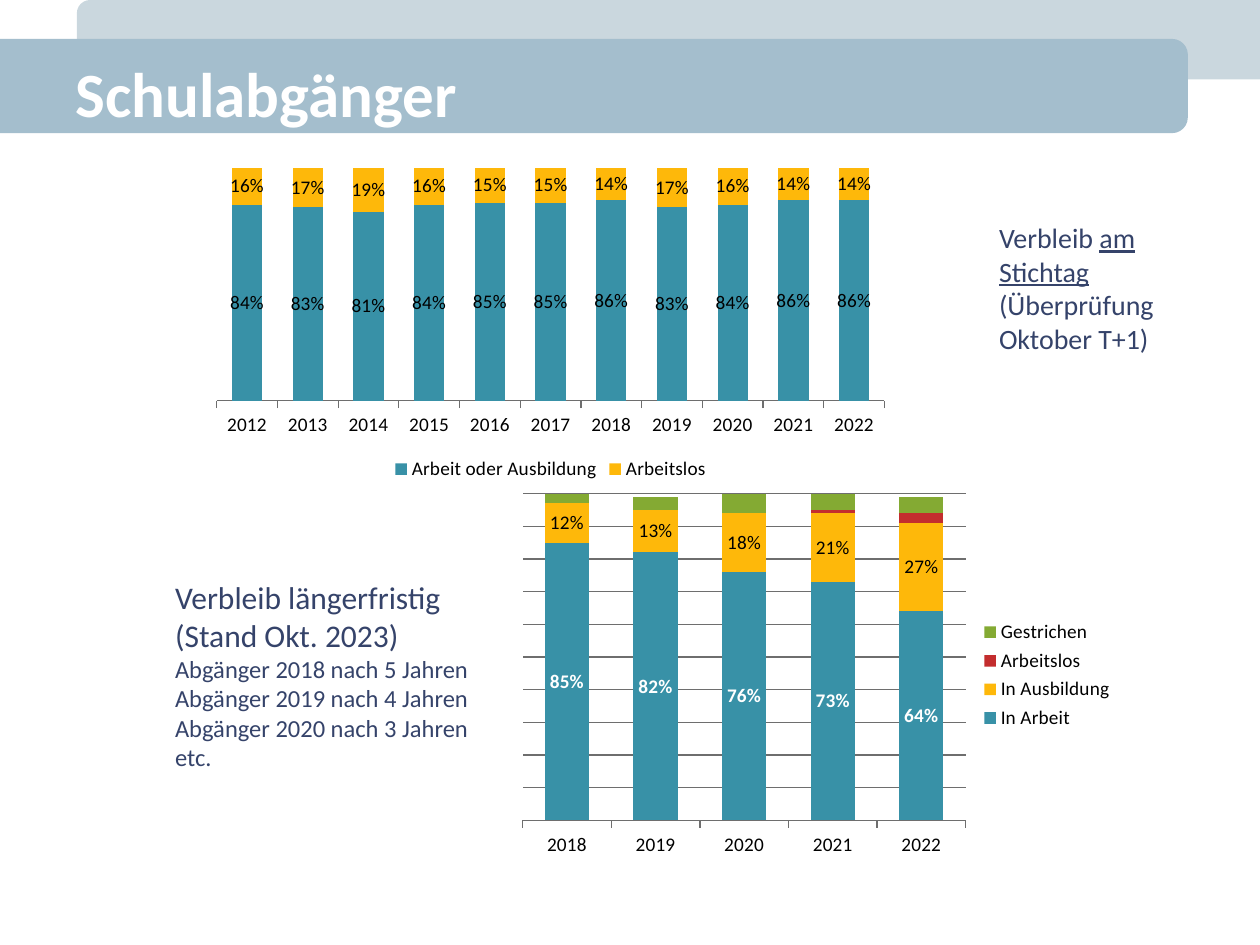
from typing import NamedTuple

from lxml import etree
from pptx import Presentation
from pptx.chart.data import CategoryChartData
from pptx.dml.color import RGBColor
from pptx.enum.chart import (XL_CHART_TYPE, XL_LABEL_POSITION, XL_LEGEND_POSITION,
                             XL_TICK_LABEL_POSITION, XL_TICK_MARK)
from pptx.enum.shapes import MSO_SHAPE
from pptx.enum.text import MSO_ANCHOR, PP_ALIGN
from pptx.oxml.ns import qn
from pptx.util import Cm, Pt

STACKED = XL_CHART_TYPE.COLUMN_STACKED
LABEL_CENTER = XL_LABEL_POSITION.CENTER
LEGEND_BOTTOM, LEGEND_RIGHT = XL_LEGEND_POSITION.BOTTOM, XL_LEGEND_POSITION.RIGHT
LABELS_LOW = XL_TICK_LABEL_POSITION.LOW
TICK_OUT, TICK_NONE = XL_TICK_MARK.OUTSIDE, XL_TICK_MARK.NONE
ROUND_TOP = MSO_SHAPE.ROUND_2_SAME_RECTANGLE
MIDDLE, LEFT = MSO_ANCHOR.MIDDLE, PP_ALIGN.LEFT

FONT = "Calibri"
COLORS = {
    "back_bar": "8BA8B8", "title_bar": "A4BECD", "white": "FFFFFF", "black": "000000",
    "text": "35436A", "axis": "6E6E6E",
    "teal": "3891A7", "yellow": "FEB80A", "red": "C32D2E", "green": "84AA33",
}


class Box(NamedTuple):
    """Left, top, width and height in centimetres."""
    left: float
    top: float
    width: float
    height: float

    def lengths(self):
        return [Cm(v) for v in self]


class Bar(NamedTuple):
    box: Box
    rotation: int
    color: str
    alpha: int = 100


class Series(NamedTuple):
    name: str
    color: str
    percents: list
    label_color: str | None = None
    bold: bool = False


class StackedChart(NamedTuple):
    box: Box
    first_year: int
    series: list
    legend: XL_LEGEND_POSITION
    grid: bool = False


BARS = [
    Bar(Box(12.7, -11.15, 1.6, 23.9), 270, "back_bar", 45),
    Bar(Box(11.02, -10.24, 1.9, 23.95), 90, "title_bar"),
]

CHARTS = [
    StackedChart(Box(4.09, 3.25, 14.02, 6.55), 2012, [
        Series("Arbeit oder Ausbildung", "teal",
               [84, 83, 81, 84, 85, 85, 86, 83, 84, 86, 86], "black"),
        Series("Arbeitslos", "yellow",
               [16, 17, 19, 16, 15, 15, 14, 17, 16, 14, 14], "black"),
    ], LEGEND_BOTTOM),
    StackedChart(Box(10.29, 9.8, 12.42, 7.62), 2018, [
        Series("In Arbeit", "teal", [85, 82, 76, 73, 64], "white", True),
        Series("In Ausbildung", "yellow", [12, 13, 18, 21, 27], "black"),
        Series("Arbeitslos", "red", [0, 0, 0, 1, 3]),
        Series("Gestrichen", "green", [3, 4, 6, 5, 5]),
    ], LEGEND_RIGHT, grid=True),
]


def rgb(name: str) -> RGBColor:
    return RGBColor.from_string(COLORS[name])


def style_font(font, size: float, color: str, bold: bool = False) -> None:
    font.name, font.size, font.bold = FONT, Pt(size), bold
    font.color.rgb = rgb(color)


def add_run(p, text: str, *, size: float, color: str = "text",
            bold: bool = False, underline: bool = False) -> None:
    r = p.add_run()
    r.text = text
    style_font(r.font, size, color, bold)
    r.font.underline = underline


def add_bar(slide, bar: Bar):
    sp = slide.shapes.add_shape(ROUND_TOP, *bar.box.lengths())
    sp.rotation = bar.rotation
    sp.shadow.inherit = False
    sp.fill.solid()
    sp.fill.fore_color.rgb = rgb(bar.color)
    sp.line.fill.background()
    if bar.alpha < 100:
        clr = sp._element.spPr.find(".//" + qn("a:srgbClr"))
        etree.SubElement(clr, qn("a:alpha"), val=str(bar.alpha * 1000))
    return sp


def add_text(slide, box: Box, paragraphs: list) -> None:
    """Each paragraph is a list of (text, format) runs."""
    tf = slide.shapes.add_textbox(*box.lengths()).text_frame
    tf.word_wrap = True
    for i, runs in enumerate(paragraphs):
        p = tf.add_paragraph() if i else tf.paragraphs[0]
        for text, fmt in runs:
            add_run(p, text, **fmt)


def add_chart(slide, spec: StackedChart) -> None:
    data = CategoryChartData(number_format="0%")
    data.categories = [str(spec.first_year + i)
                       for i in range(len(spec.series[0].percents))]
    for s in spec.series:
        data.add_series(s.name, [v / 100 for v in s.percents])
    chart = slide.shapes.add_chart(STACKED, *spec.box.lengths(), data).chart
    style_font(chart.font, 11, "black")
    chart.has_title = False
    chart.has_legend = True
    chart.legend.position = spec.legend
    chart.legend.include_in_layout = False

    cat, val = chart.category_axis, chart.value_axis
    cat.major_tick_mark, cat.minor_tick_mark = TICK_OUT, TICK_NONE
    cat.tick_label_position = LABELS_LOW
    cat.format.line.color.rgb = rgb("axis")
    val.minimum_scale, val.maximum_scale, val.major_unit = 0, 1, 0.1
    val.visible = False
    val.has_major_gridlines = spec.grid
    if spec.grid:
        val.major_gridlines.format.line.color.rgb = rgb("axis")

    plot = chart.plots[0]
    plot.gap_width, plot.overlap = 100, 100
    plot.vary_by_categories = False
    for s, drawn in zip(spec.series, plot.series):
        drawn.format.fill.solid()
        drawn.format.fill.fore_color.rgb = rgb(s.color)
        if s.label_color:
            labels = drawn.data_labels
            labels.show_value = True
            labels.position = LABEL_CENTER
            labels.number_format = "0%"
            labels.number_format_is_linked = False
            style_font(labels.font, 11, s.label_color, s.bold)


def main() -> None:
    prs = Presentation()
    prs.slide_width, prs.slide_height = Cm(25.4), Cm(19.05)
    slide = prs.slides.add_slide(prs.slide_layouts[5])

    title = slide.shapes.title
    title.left, title.top, title.width, title.height = Box(1.27, 0.76, 22.86, 2.21).lengths()
    title.text_frame.vertical_anchor = MIDDLE
    p = title.text_frame.paragraphs[0]
    p.alignment = LEFT
    add_run(p, "Schulabgänger", size=36, color="white", bold=True)
    for bar in BARS:  # the bars lie behind the title
        title._element.addprevious(add_bar(slide, bar)._element)

    body, large, small = {"size": 16}, {"size": 18}, {"size": 14}
    add_text(slide, Box(19.89, 4.32, 5, 3), [
        [("Verbleib ", body), ("am Stichtag", {**body, "underline": True})],
        [("(Überprüfung Oktober T+1)", body)],
    ])
    add_text(slide, Box(3.28, 11.53, 7.01, 4.19), [
        [("Verbleib längerfristig", large)],
        [("(Stand Okt. 2023)", large)],
        [("Abgänger 2018 nach 5 Jahren", small)],
        [("Abgänger 2019 nach 4 Jahren", small)],
        [("Abgänger 2020 nach 3 Jahren", small)],
        [("etc.", small)],
    ])
    for spec in CHARTS:
        add_chart(slide, spec)
    prs.save("out.pptx")


if __name__ == "__main__":
    main()
